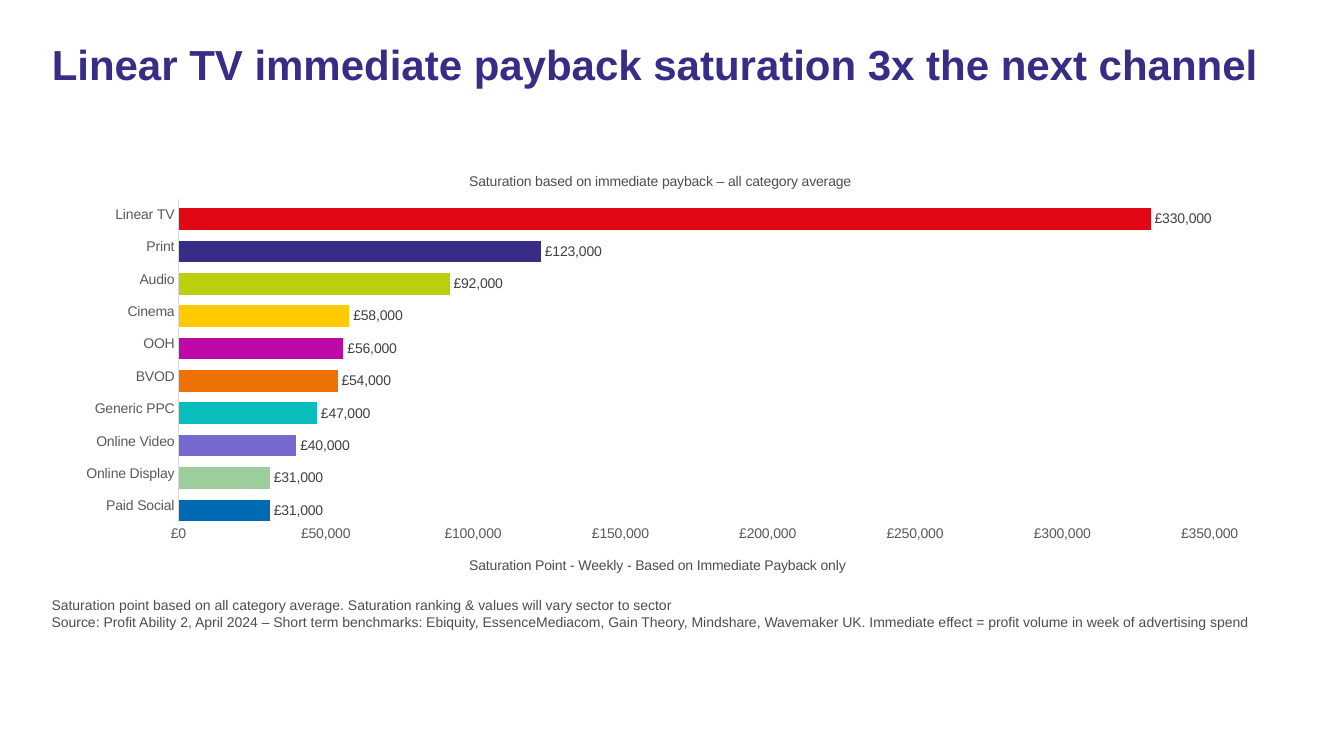
from dataclasses import dataclass

from lxml import etree
from pptx import Presentation, util as u
from pptx.chart.data import CategoryChartData
from pptx.dml.color import RGBColor
from pptx.enum import chart as ch, text
from pptx.oxml.ns import qn


@dataclass(frozen=True)
class Theme:
    font: str = "Arial"
    title_size: int = 30
    small_size: int = 10
    title: str = "372D87"
    note: str = "4D4D4D"
    axis: str = "595959"
    label: str = "404040"
    line: str = "D9D9D9"


THEME = Theme()
WIDTH, HEIGHT = 13.33, 7.5
MONEY = '"£"#,##0'

# Channel, weekly saturation point, bar colour: bottom bar first
CHANNELS = [
    ("Paid Social", 31000, "0069B4"),
    ("Online Display", 31000, "9CCD9A"),
    ("Online Video", 40000, "766ACE"),
    ("Generic PPC", 47000, "09BDBD"),
    ("BVOD", 54000, "EE7203"),
    ("OOH", 56000, "BD09A7"),
    ("Cinema", 58000, "FFCA00"),
    ("Audio", 92000, "BCCF0F"),
    ("Print", 123000, "372D87"),
    ("Linear TV", 330000, "E30615"),
]
NOTES = [
    "Saturation point based on all category average. Saturation ranking & values will vary sector to sector",
    "Source: Profit Ability 2, April 2024 – Short term benchmarks: Ebiquity, EssenceMediacom, Gain Theory, "
    "Mindshare, Wavemaker UK. Immediate effect = profit volume in week of advertising spend",
]


def style(font, colour, size=THEME.small_size, bold=False):
    font.name = THEME.font
    font.size = u.Pt(size)
    font.bold = bold
    font.color.rgb = RGBColor.from_string(colour)


def fill(part, colour):
    part.format.fill.solid()
    part.format.fill.fore_color.rgb = RGBColor.from_string(colour)


def set_layout(parent, **shares):
    """Place a chart part by shares of the chart's size."""
    layout = parent.find(qn("c:layout"))
    if layout is None:
        layout = etree.Element(qn("c:layout"))
        before = parent.find(qn("c:tx"))
        if before is None:
            parent.insert(0, layout)
        else:
            before.addnext(layout)
    for child in list(layout):
        layout.remove(child)
    manual = etree.SubElement(layout, qn("c:manualLayout"))
    if "w" in shares:
        etree.SubElement(manual, qn("c:layoutTarget"), val="inner")
    for side in "xy":
        etree.SubElement(manual, qn(f"c:{side}Mode"), val="edge")
    for name, share in shares.items():
        etree.SubElement(manual, qn(f"c:{name}"), val=str(share))


def set_chart_title(title, wording, x, y):
    title.text_frame.text = wording
    for span in title.text_frame.paragraphs[0].runs:
        style(span.font, THEME.note)
    set_layout(title._element, x=x, y=y)


def add_title(page, box, wording):
    title = page.shapes.title
    title.left, title.top, title.width, title.height = box
    frame = title.text_frame
    frame.text = wording
    frame.word_wrap = True
    frame.auto_size = text.MSO_AUTO_SIZE.NONE
    frame.vertical_anchor = text.MSO_ANCHOR.TOP
    para = frame.paragraphs[0]
    para.alignment = text.PP_ALIGN.LEFT
    para.line_spacing = 0.9
    style(para.runs[0].font, THEME.title, THEME.title_size, True)


def add_saturation_chart(page, box):
    names, values, colours = zip(*CHANNELS)
    data = CategoryChartData(number_format=MONEY)
    data.categories = names
    data.add_series("Series 1", values)
    for name in ("Series 2", "Series 3"):
        data.add_series(name, [None] * len(names))
    chart = page.shapes.add_chart(ch.XL_CHART_TYPE.BAR_CLUSTERED, *box, data).chart
    style(chart.font, THEME.axis)
    chart.has_legend = False
    chart.has_title = True
    set_chart_title(chart.chart_title,
                    "Saturation based on immediate payback – all category average", 0.34, 0.04)
    set_layout(chart._chartSpace.chart.plotArea, x=0.098, y=0.107, w=0.866, h=0.742)

    # Bars and their labels
    plot = chart.plots[0]
    plot.gap_width, plot.overlap = 10, 80
    plot.vary_by_categories = False
    for series, colour in zip(plot.series, (THEME.title, "0069B4", "E10514")):
        fill(series, colour)
        series.invert_if_negative = False
    bars = plot.series[0]
    for index, colour in enumerate(colours):
        fill(bars.points[index], colour)
    labels = bars.data_labels
    labels.show_value = True
    labels.position = ch.XL_LABEL_POSITION.OUTSIDE_END
    labels.number_format, labels.number_format_is_linked = MONEY, False
    style(labels.font, THEME.label)

    # Axes
    for axis in (chart.category_axis, chart.value_axis):
        axis.has_major_gridlines = False
        axis.major_tick_mark = axis.minor_tick_mark = ch.XL_TICK_MARK.NONE
        style(axis.tick_labels.font, THEME.axis)
    line = chart.category_axis.format.line
    line.width = u.Pt(0.75)
    line.color.rgb = RGBColor.from_string(THEME.line)
    money = chart.value_axis
    money.format.line.fill.background()
    money.minimum_scale, money.maximum_scale, money.major_unit = 0, 350000, 50000
    money.tick_labels.number_format = MONEY
    money.tick_labels.number_format_is_linked = False
    set_chart_title(money.axis_title,
                    "Saturation Point - Weekly - Based on Immediate Payback only", 0.34, 0.92)


def add_notes(page, box):
    frame = page.shapes.add_textbox(*box).text_frame
    frame.word_wrap = True
    frame.text = "\n".join(NOTES)
    for para in frame.paragraphs:
        style(para.runs[0].font, THEME.note)


def main():
    deck = Presentation()
    deck.slide_width, deck.slide_height = u.Inches(WIDTH), u.Inches(HEIGHT)

    def area(left, top, width, height):
        """Turn shares of the slide's size into a box."""
        return (int(deck.slide_width * left), int(deck.slide_height * top),
                int(deck.slide_width * width), int(deck.slide_height * height))

    page = deck.slides.add_slide(deck.slide_layouts[5])
    add_title(page, area(0.031, 0.052, 0.93, 0.149),
              "Linear TV immediate payback saturation 3x the next channel")
    add_saturation_chart(page, area(0.046, 0.201, 0.886, 0.577))
    add_notes(page, area(0.031, 0.783, 0.93, 0.044))
    deck.save("out.pptx")


if __name__ == "__main__":
    main()
